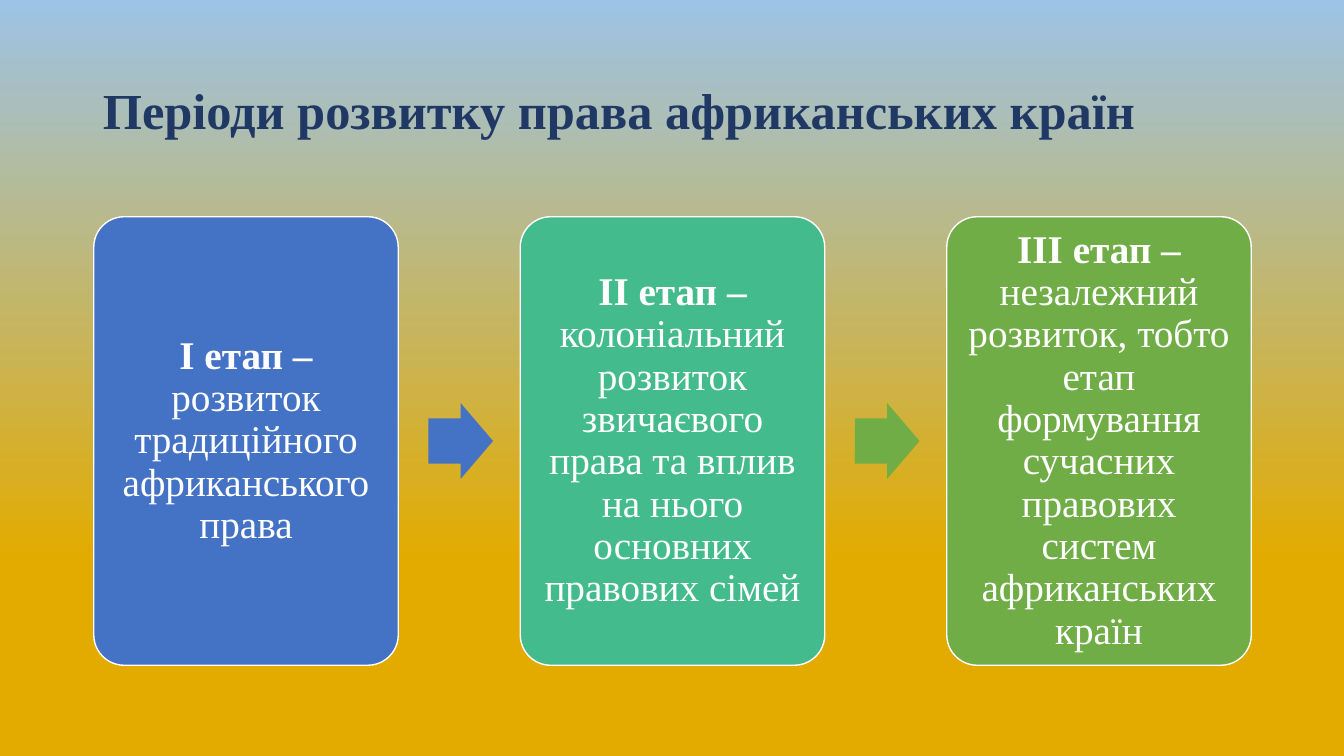
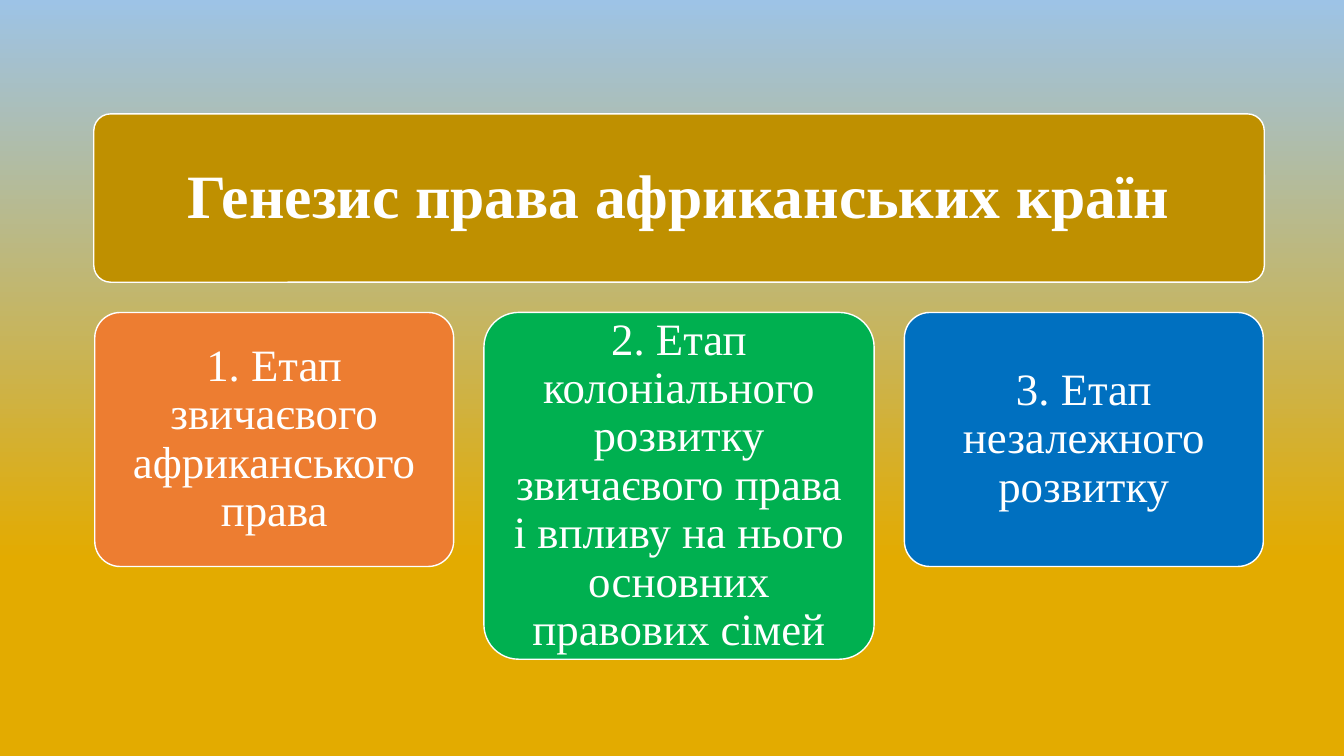
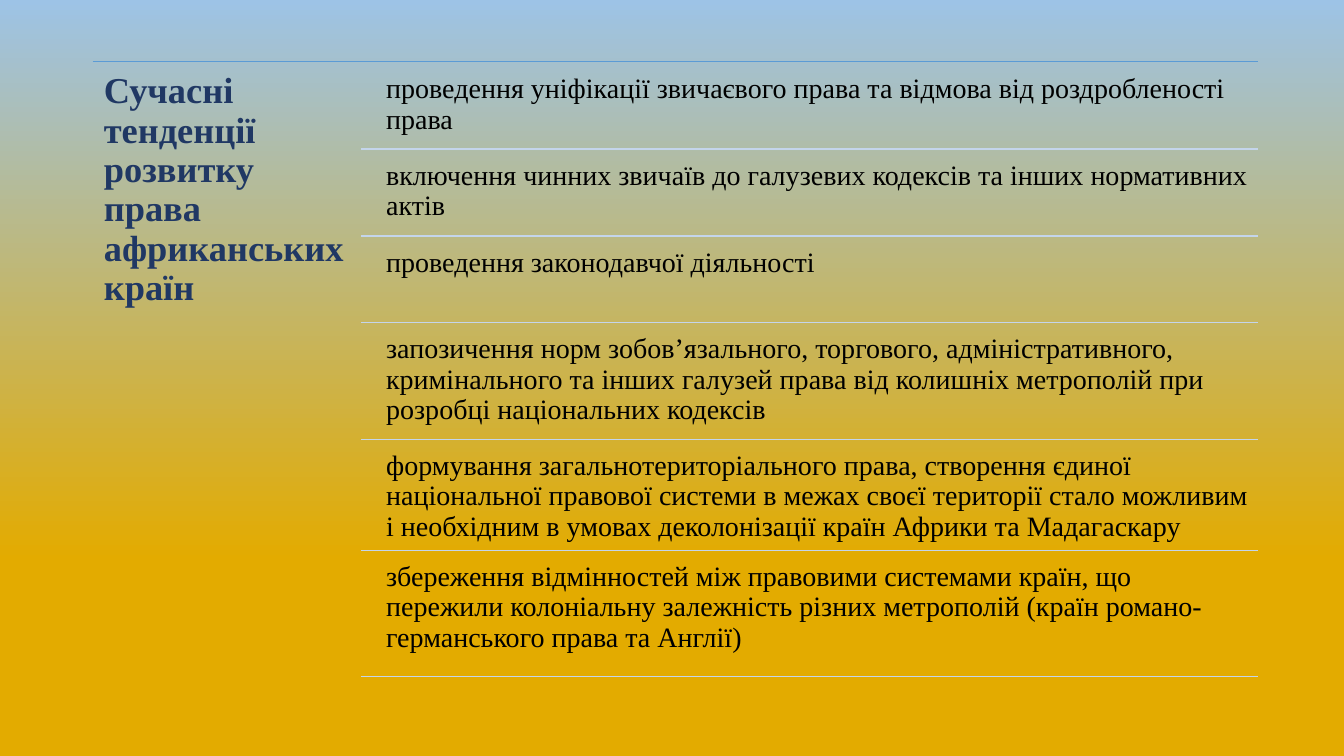
from pptx import Presentation
from pptx import util as u
from pptx.dml.color import RGBColor
from pptx.enum import shapes, text
from pptx.oxml.ns import qn
from lxml import etree

PX = 9144  # 100 px to the inch
FONT = "Times New Roman"
WHITE = RGBColor(0xFF, 0xFF, 0xFF)
BLACK = RGBColor(0x00, 0x00, 0x00)
NAVY = RGBColor(0x20, 0x38, 0x64)
SKY = RGBColor(0x9D, 0xC3, 0xE6)
AMBER = RGBColor(0xE3, 0xAB, 0x00)
BLUE = RGBColor(0x44, 0x72, 0xC4)
TEAL = RGBColor(0x43, 0xBB, 0x8D)
LEAF = RGBColor(0x70, 0xAD, 0x47)
GOLD = RGBColor(0xBF, 0x90, 0x00)
ORANGE = RGBColor(0xED, 0x7D, 0x31)
GREEN = RGBColor(0x00, 0xB0, 0x50)
AZURE = RGBColor(0x00, 0x70, 0xC0)
RULE_BLUE = RGBColor(0x5B, 0x9B, 0xD5)
RULE_PALE = RGBColor(0xC4, 0xD5, 0xEB)
LEFT, CENTER = text.PP_ALIGN.LEFT, text.PP_ALIGN.CENTER
TOP, MIDDLE = text.MSO_ANCHOR.TOP, text.MSO_ANCHOR.MIDDLE


def write(shape, runs, size, color, inset, align=LEFT, anchor=MIDDLE):
    """Fill a shape with one paragraph of (wording, bold) runs."""
    frame = shape.text_frame
    frame.word_wrap = True
    frame.auto_size = text.MSO_AUTO_SIZE.NONE
    frame.vertical_anchor = anchor
    frame.margin_left = frame.margin_right = inset * PX
    frame.margin_top = frame.margin_bottom = inset * PX
    paragraph = frame.paragraphs[0]
    paragraph.alignment = align
    paragraph.line_spacing = 0.9
    for wording, bold in runs:
        run = paragraph.add_run()
        run.text = wording
        run.font.name = FONT
        run.font.size = u.Pt(size)
        run.font.bold = bold
        run.font.color.rgb = color


def add_block(slide, kind, box, fill, outlined=True):
    block = slide.shapes.add_shape(kind, *(n * PX for n in box))
    block.shadow.inherit = False
    block.fill.solid()
    block.fill.fore_color.rgb = fill
    if outlined:
        block.line.color.rgb = WHITE
        block.line.width = u.Pt(1)
    else:
        block.line.fill.background()
    return block


CARD = shapes.MSO_SHAPE.ROUNDED_RECTANGLE
ARROW = shapes.MSO_SHAPE.RIGHT_ARROW

deck = Presentation()
deck.slide_width, deck.slide_height = 1333 * PX, 750 * PX
backdrop = deck.slide_master.background.fill
backdrop.gradient()
backdrop.gradient_angle = 90
for stop, color, position in zip(backdrop.gradient_stops, (AMBER, SKY), (0.26, 1)):
    stop.color.rgb = color
    stop.position = position

# Each slide's title: wording, box, size, colour, inset, alignment, anchor
titles = [
    ("Періоди розвитку права африканських країн",
     (92, 40, 1150, 145), 36, NAVY, 10, LEFT, MIDDLE),
    ("Генезис права африканських країн",
     (98, 118, 1151, 157), 44, WHITE, 18, CENTER, MIDDLE),
    ("Сучасні тенденції розвитку права африканських країн",
     (92, 61, 266, 614), 26, NAVY, 11, LEFT, TOP),
]
slides = []
for wording, box, *style in titles:
    slide = deck.slides.add_slide(deck.slide_layouts[5])
    title = slide.shapes.title
    title.left, title.top, title.width, title.height = (n * PX for n in box)
    write(title, [(wording, True)], *style)
    slides.append(slide)
periods, genesis, trends = slides

# Periods: three cards joined by arrows
stages = [
    ("І етап – ", "розвиток традиційного африканського права", BLUE),
    ("ІІ етап – ", "колоніальний розвиток звичаєвого права та вплив на нього "
     "основних правових сімей", TEAL),
    ("ІІІ етап – ", "незалежний розвиток, тобто етап формування сучасних "
     "правових систем африканських країн", LEAF),
]
for i, (stage, meaning, fill) in enumerate(stages):
    x = 93 + 423 * i
    card = add_block(periods, CARD, (x, 215, 302, 445), fill)
    card.adjustments[0] = 0.1
    write(card, [(stage, True), (meaning, False)], 28, WHITE, 12, CENTER)
for i, fill in enumerate((BLUE, LEAF)):
    arrow = add_block(periods, ARROW, (425 + 423 * i, 400, 64, 75), fill, outlined=False)
    arrow.adjustments[0], arrow.adjustments[1] = 0.6, 0.5

# Genesis: a banner behind the title, three stages below
banner = add_block(genesis, CARD, (93, 113, 1161, 167), GOLD)
banner.adjustments[0] = 0.1
banner._element.addnext(genesis.shapes.title._element)
branches = [
    ("1. Етап звичаєвого африканського права", 94, 356, 252, ORANGE),
    ("2. Етап колоніального розвитку звичаєвого права і впливу на нього "
     "основних правових сімей", 480, 387, 344, GREEN),
    ("3. Етап незалежного розвитку", 897, 356, 252, AZURE),
]
for wording, x, width, height, fill in branches:
    card = add_block(genesis, CARD, (x, 310, width, height), fill)
    card.adjustments[0] = 0.1
    write(card, [(wording, False)], 32, WHITE, 13, CENTER)

# Trends: each row ends at its own rule
rows = [
    ("проведення уніфікації звичаєвого права та відмова від роздробленості права", 148),
    ("включення чинних звичаїв до галузевих кодексів та інших нормативних актів", 234),
    ("проведення законодавчої діяльності", 320),
    ("запозичення норм зобов’язального, торгового, адміністративного, кримінального "
     "та інших галузей права від колишніх метрополій при розробці національних кодексів", 436),
    ("формування загальнотериторіального права, створення єдиної національної правової "
     "системи в межах своєї території стало можливим і необхідним в умовах деколонізації "
     "країн Африки та Мадагаскару", 546),
    ("збереження відмінностей між правовими системами країн, що пережили колоніальну "
     "залежність різних метрополій (країн романо-германського права та Англії)", 671),
]
rules = [(92, 61, RULE_BLUE)]
row_top = 66
for wording, bottom in rows:
    row = trends.shapes.add_textbox(375 * PX, row_top * PX, 873 * PX, (bottom - row_top) * PX)
    write(row, [(wording, False)], 20, BLACK, 8, anchor=TOP)
    rules.append((358, bottom, RULE_PALE))
    row_top = bottom + 4
for x, y, color in rules:
    rule = trends.shapes.add_connector(
        shapes.MSO_CONNECTOR.STRAIGHT, x * PX, y * PX, 1248 * PX, y * PX)
    rule.line.color.rgb = color
    rule.line.width = u.Pt(1)
    etree.SubElement(rule._element.spPr, qn("a:effectLst"))

deck.save("out.pptx")
